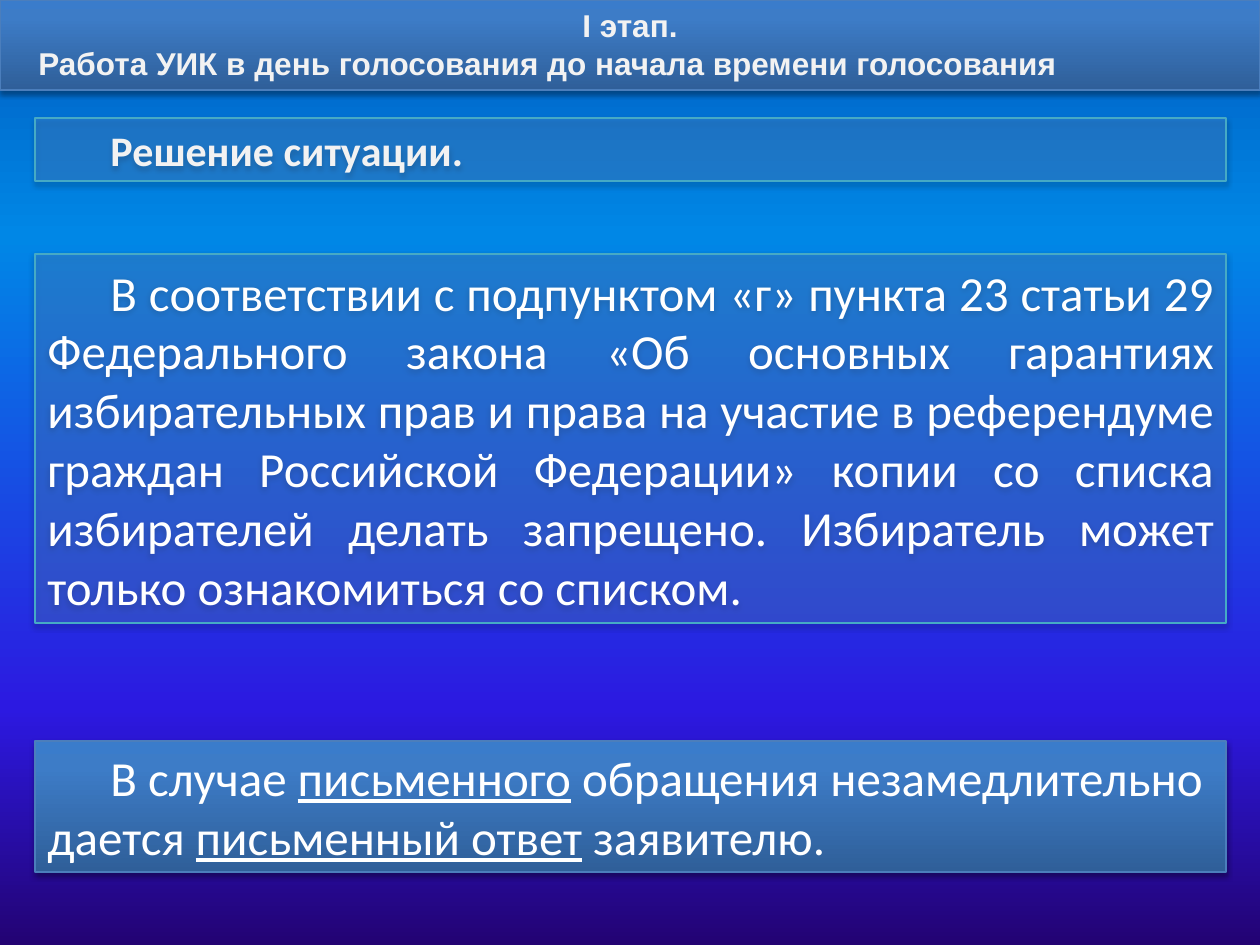
from lxml.etree import SubElement
from pptx import Presentation
from pptx.dml.color import RGBColor as RGB
from pptx.enum.shapes import MSO_SHAPE as SHAPE
from pptx.enum.text import MSO_ANCHOR as ANCHOR, MSO_AUTO_SIZE as AUTO, PP_ALIGN as ALIGN
from pptx.oxml.ns import qn
from pptx.util import Emu, Pt

WHITE = RGB(0xFF, 0xFF, 0xFF)
PALE = RGB(0xF2, 0xF2, 0xF2)
GLASS = RGB(0x55, 0x8E, 0xD5)
TEAL = RGB(0x46, 0xAA, 0xC5)
BLUE = RGB(0x4B, 0x7E, 0xBC)
BLACK = RGB(0, 0, 0)
BAR_STOPS = [(0, RGB(0x2F, 0x5F, 0x99)), (80, RGB(0x3D, 0x7C, 0xC7)),
             (100, RGB(0x3A, 0x7C, 0xCB))]
SKY_STOPS = [(0, RGB(0x23, 0x03, 0x73)), (25, RGB(0x2C, 0x19, 0xE1)),
             (75, RGB(0x00, 0x87, 0xE6)), (100, RGB(0x00, 0x5C, 0xBF))]
MARGIN, BOX_WIDTH, INDENT = 35, 1191, 63


def px(n):
    return Emu(914400 * n // 126)


def add_color(parent, color, alpha=None):
    clr = SubElement(parent, qn("a:srgbClr"), val=str(color))
    if alpha is not None:
        SubElement(clr, qn("a:alpha"), val=str(alpha * 1000))


class Deck:
    """Holds the style and the current slide, and draws its elements."""

    def __init__(self, prs):
        self.slide = prs.slides.add_slide(prs.slide_layouts[6])

    def gradient(self, fill, props, stops):
        fill.solid()
        solid = props.find(qn("a:solidFill"))
        grad = SubElement(props, qn("a:gradFill"), rotWithShape="1")
        props.replace(solid, grad)
        gs_list = SubElement(grad, qn("a:gsLst"))
        for pos, color in stops:
            add_color(SubElement(gs_list, qn("a:gs"), pos=str(pos * 1000)), color)
        SubElement(grad, qn("a:lin"), ang=str(270 * 60000), scaled="0")

    def background(self, stops):
        fill = self.slide.background.fill
        fill.solid()
        self.gradient(fill, self.slide.element.find(".//" + qn("p:bgPr")), stops)

    def box(self, x, y, w, h, line, anchor):
        sp = self.slide.shapes.add_shape(SHAPE.RECTANGLE, px(x), px(y), px(w), px(h))
        sp.line.color.rgb = line
        sp.line.width = Pt(0.75)
        sp.shadow.inherit = False
        effects = sp.element.spPr.find(qn("a:effectLst"))
        shadow = SubElement(effects, qn("a:outerShdw"), blurRad="40000", dist="23000",
                            dir=str(90 * 60000), rotWithShape="0")
        add_color(shadow, BLACK, 35)
        tf = sp.text_frame
        tf.word_wrap = True
        tf.auto_size = AUTO.SHAPE_TO_FIT_TEXT
        tf.vertical_anchor = anchor
        return sp

    def bar(self, x, y, w, h):
        sp = self.box(x, y, w, h, BLUE, ANCHOR.TOP)
        self.gradient(sp.fill, sp.element.spPr, BAR_STOPS)
        return sp.text_frame

    def glass(self, x, y, w, h):
        sp = self.box(x, y, w, h, TEAL, ANCHOR.MIDDLE)
        sp.fill.solid()
        sp.fill.fore_color.rgb = GLASS
        clr = sp.element.spPr.find(qn("a:solidFill"))[0]
        SubElement(clr, qn("a:alpha"), val="33000")
        return sp.text_frame

    def text(self, p, runs, size, color, align, font="Calibri", bold=False, indent=INDENT):
        p.alignment = align
        p._p.get_or_add_pPr().set("indent", str(px(indent)))
        p.font.name, p.font.size, p.font.bold = font, Pt(size), bold
        p.font.color.rgb = color
        for words, underline in runs:
            r = p.add_run()
            r.text = words
            if underline:
                r.font.underline = True


def main():
    prs = Presentation()
    prs.slide_width, prs.slide_height = px(1260), px(945)
    deck = Deck(prs)
    deck.background(SKY_STOPS)

    tf = deck.bar(0, 0, 1260, 90)
    deck.text(tf.paragraphs[0], [("I\u00a0этап.", False)], 18, PALE, ALIGN.CENTER,
              "Arial", True, 0)
    deck.text(tf.add_paragraph(),
              [("Работа УИК в день голосования до начала времени голосования", False)],
              18, PALE, ALIGN.LEFT, "Arial", True, 26)

    tf = deck.glass(MARGIN, 254, BOX_WIDTH, 369)
    deck.text(tf.paragraphs[0], [(
        "В соответствии с подпунктом «г» пункта 23 статьи 29 Федерального закона "
        "«Об основных гарантиях избирательных прав и права на участие в референдуме "
        "граждан Российской Федерации» копии со списка избирателей делать запрещено. "
        "Избиратель может только ознакомиться со списком.", False)],
        28, WHITE, ALIGN.JUSTIFY)

    tf = deck.bar(MARGIN, 741, BOX_WIDTH, 131)
    deck.text(tf.paragraphs[0], [
        ("В случае ", False), ("письменного", True),
        (" обращения незамедлительно дается ", False),
        ("письменный ответ", True), (" заявителю.", False)], 28, WHITE, ALIGN.LEFT)

    tf = deck.glass(MARGIN, 118, BOX_WIDTH, 63)
    deck.text(tf.paragraphs[0], [("Решение ситуации.", False)], 24, PALE,
              ALIGN.JUSTIFY, bold=True)

    prs.save("out.pptx")


if __name__ == "__main__":
    main()
